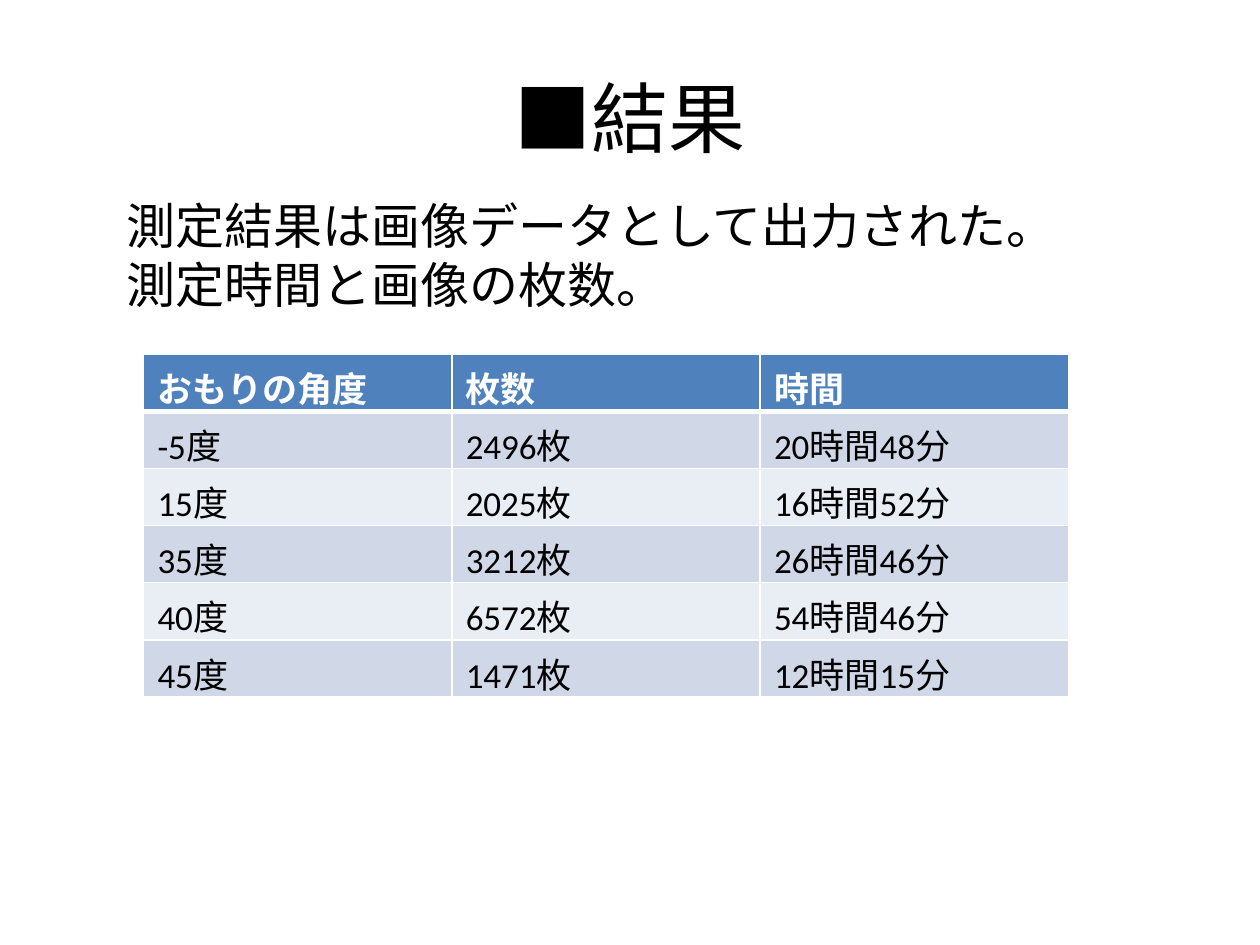
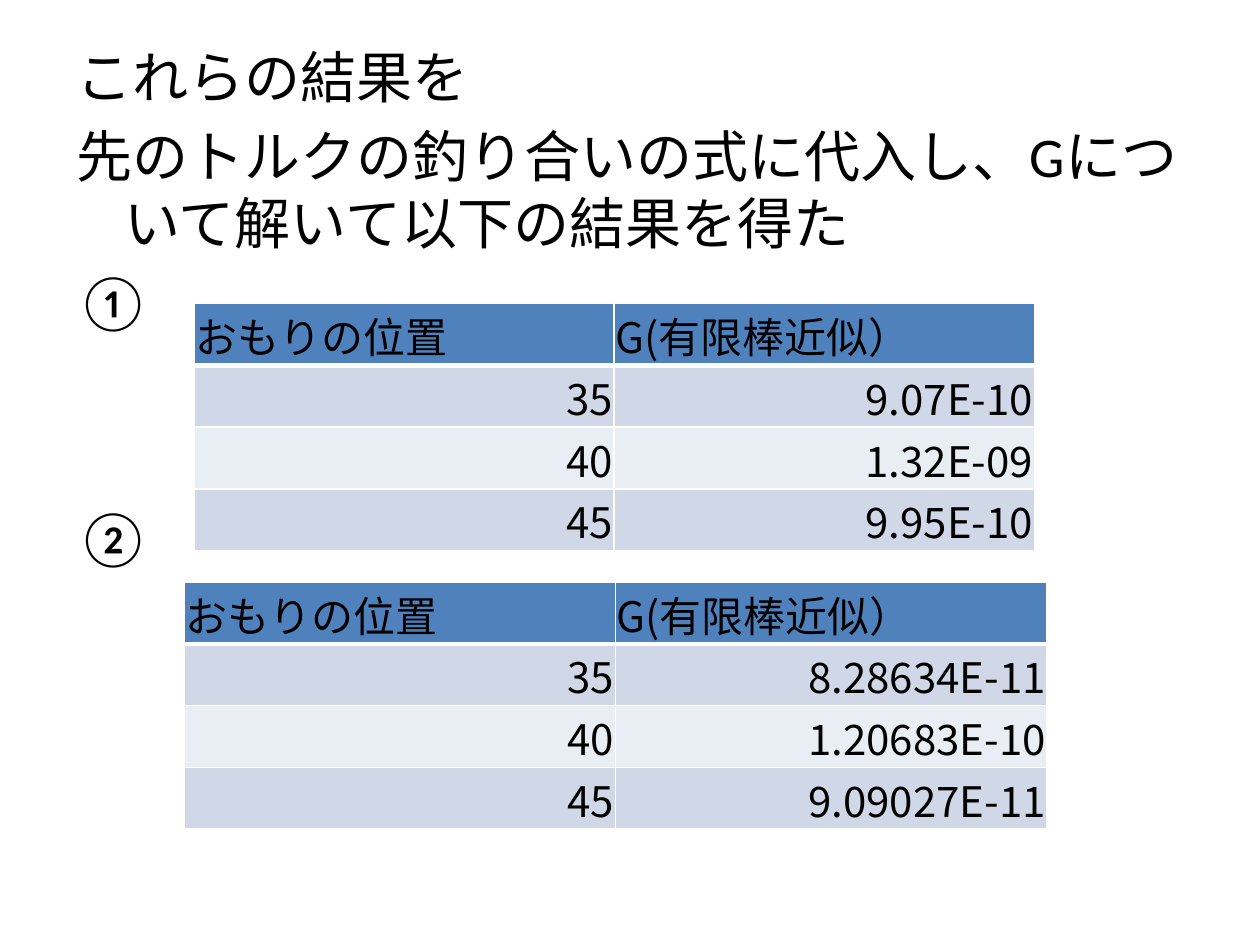
from lxml.etree import SubElement
from pptx import Presentation
from pptx.dml.color import RGBColor
from pptx.enum.text import MSO_ANCHOR as Anchor, PP_ALIGN as Align
from pptx.oxml.ns import qn
from pptx.util import Inches, Pt

BLACK, WHITE, HEADER = "000000", "FFFFFF", "4F81BD"
BANDS = ("D0D8E8", "E9EDF4")
LATIN, JAPANESE = "Calibri", "Noto Sans CJK JP"
TITLE_ONLY, BLANK = 5, 6

RESULT_CELLS = {
    "margins": (0.11, 0.06, 0.11, 0.06), "anchor": Anchor.TOP, "number_align": Align.LEFT,
    "header": {"size": Pt(20), "name": LATIN, "bold": True}, "header_color": WHITE,
    "body": {"size": Pt(20), "name": LATIN, "bold": False},
}
GRAVITY_FONT = {"size": Pt(24), "name": JAPANESE, "bold": False}
GRAVITY_CELLS = {
    "margins": (0.01, 0.01, 0.01, 0), "anchor": Anchor.MIDDLE, "number_align": Align.RIGHT,
    "header": GRAVITY_FONT, "header_color": BLACK, "body": GRAVITY_FONT,
}


def rgb(color):
    return RGBColor.from_string(color)


def set_attributes(target, values):
    for name, value in values.items():
        setattr(target, name, value)


def write(paragraph, text, font, color=BLACK):
    """Add one run with its Latin and East Asian fonts."""
    run = paragraph.add_run()
    run.text = text
    set_attributes(run.font, font)
    run.font.color.rgb = rgb(color)
    SubElement(run.font._element, qn("a:ea"), typeface=JAPANESE)


def add_title(slide, box, text):
    title = slide.shapes.title
    set_attributes(title, dict(zip(("left", "top", "width", "height"), map(Inches, box))))
    title.text_frame.vertical_anchor = Anchor.MIDDLE
    paragraph = title.text_frame.paragraphs[0]
    paragraph.alignment = Align.CENTER
    write(paragraph, text, {"size": Pt(44), "name": LATIN})


def add_text(slide, box, lines, size, hanging=0):
    """Write (text, space before in points) lines, with an optional hanging indent."""
    frame = slide.shapes.add_textbox(*map(Inches, box)).text_frame
    frame.word_wrap = True
    for index, (text, space_before) in enumerate(lines):
        paragraph = frame.add_paragraph() if index else frame.paragraphs[0]
        paragraph.space_before = Pt(space_before)
        if hanging:
            properties = paragraph._p.get_or_add_pPr()
            properties.set("marL", str(Inches(hanging)))
            properties.set("indent", str(-Inches(hanging)))
        write(paragraph, text, {"size": Pt(size), "name": LATIN})


def add_borders(cell, row):
    """White rules, thick between the header and the first body row."""
    widths = {"L": 1, "R": 1, "T": 3 if row == 1 else 1, "B": 3 if row == 0 else 1}
    for side, width in widths.items():
        line = SubElement(cell._tc.get_or_add_tcPr(), qn(f"a:ln{side}"), w=str(Pt(width)))
        SubElement(SubElement(line, qn("a:solidFill")), qn("a:srgbClr"), val=WHITE)


def add_table(slide, box, rows, style):
    table = slide.shapes.add_table(len(rows), len(rows[0]), *map(Inches, box)).table
    left, top, right, bottom = map(Inches, style["margins"])
    cell_format = {"margin_left": left, "margin_top": top, "margin_right": right,
                   "margin_bottom": bottom, "vertical_anchor": style["anchor"]}
    for row, values in enumerate(rows):
        is_header = row == 0
        for column, value in enumerate(values):
            cell = table.cell(row, column)
            set_attributes(cell, cell_format)
            add_borders(cell, row)
            cell.fill.solid()
            cell.fill.fore_color.rgb = rgb(HEADER if is_header else BANDS[(row - 1) % 2])
            paragraph = cell.text_frame.paragraphs[0]
            paragraph.alignment = Align.LEFT if is_header else style["number_align"]
            write(paragraph, value, style["header" if is_header else "body"],
                  style["header_color"] if is_header else BLACK)


def build_measurement_slide(presentation):
    slide = presentation.slides.add_slide(presentation.slide_layouts[TITLE_ONLY])
    add_title(slide, (0.5, 0.3, 9, 1.25), "■結果")
    add_text(slide, (0.91, 1.5, 8.43, 5.89), [
        ("測定結果は画像データとして出力された。", 0),
        ("測定時間と画像の枚数。", 0),
    ], size=28)
    add_table(slide, (1.14, 2.81, 7.34, 2.67), [
        ("おもりの角度", "枚数", "時間"),
        ("-5度", "2496枚", "20時間48分"),
        ("15度", "2025枚", "16時間52分"),
        ("35度", "3212枚", "26時間46分"),
        ("40度", "6572枚", "54時間46分"),
        ("45度", "1471枚", "12時間15分"),
    ], RESULT_CELLS)


def build_gravity_slide(presentation):
    slide = presentation.slides.add_slide(presentation.slide_layouts[BLANK])
    add_text(slide, (0.51, 0.29, 9, 6.41), [
        ("これらの結果を", 6.4),
        ("先のトルクの釣り合いの式に代入し、Gについて解いて以下の結果を得た", 6.4),
        ("①", 6.4),
        ("②", 96),
    ], size=32, hanging=0.38)
    positions = ("35", "40", "45")
    table_height = 1.96
    tables = (
        ((1.54, 2.41, 6.67, table_height), ("9.07E-10", "1.32E-09", "9.95E-10")),
        ((1.46, 4.62, 6.85, table_height), ("8.28634E-11", "1.20683E-10", "9.09027E-11")),
    )
    for box, constants in tables:
        rows = [("おもりの位置", "G(有限棒近似）"), *zip(positions, constants)]
        add_table(slide, box, rows, GRAVITY_CELLS)


def main():
    presentation = Presentation()
    presentation.slide_width, presentation.slide_height = Inches(10), Inches(7.5)
    build_measurement_slide(presentation)
    build_gravity_slide(presentation)
    presentation.save("out.pptx")


if __name__ == "__main__":
    main()
